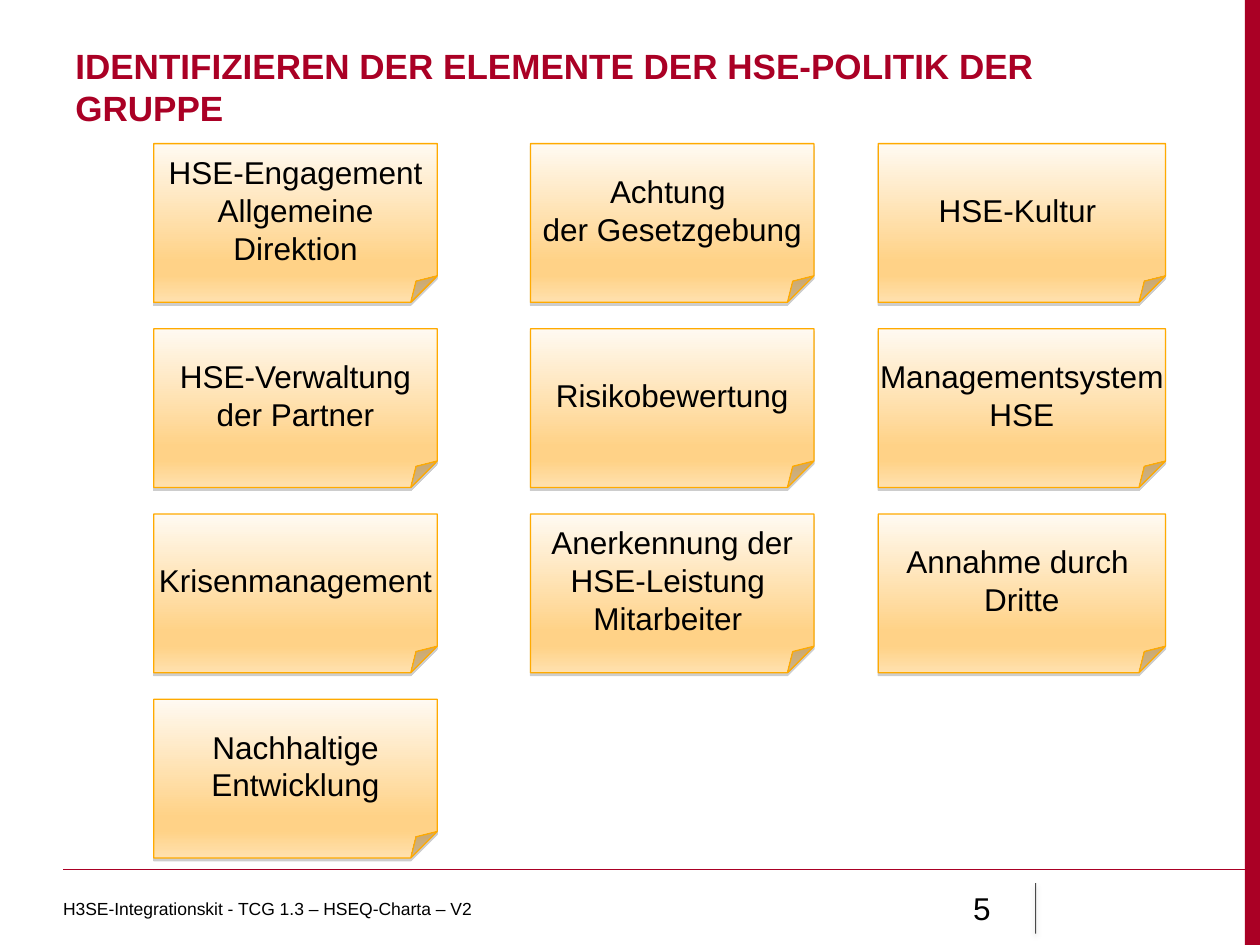
import lxml.etree
import pptx
import pptx.dml.color
import pptx.enum.shapes
import pptx.enum.text
import pptx.oxml
import pptx.oxml.ns
import pptx.util

Inches = pptx.util.Inches
Pt = pptx.util.Pt
qn = pptx.oxml.ns.qn
Align = pptx.enum.text.PP_ALIGN
Anchor = pptx.enum.text.MSO_ANCHOR
Shape = pptx.enum.shapes.MSO_SHAPE

HUES = {
    "red": "AA0025", "black": "000000", "edge": "FFAA00", "shade": "808080",
    "pale": "FFFAF2", "warm": "FFD287", "base": "FFE1AF",
}
STOPS = [(0, "pale"), (74, "warm"), (83, "warm"), (100, "base")]
COLS = [(1.22, 2.25), (4.21, 2.25), (6.97, 2.28)]
TOP, GAP, HIGH = 1.14, 0.21, 1.26
NOTES = [
    ["HSE-Engagement", "Allgemeine Direktion"],
    ["Achtung \nder Gesetzgebung"],
    ["HSE-Kultur "],
    ["HSE-Verwaltung", " der Partner "],
    ["Risikobewertung"],
    ["Managementsystem ", "HSE"],
    ["Krisenmanagement"],
    ["Anerkennung der HSE-Leistung ", "Mitarbeiter "],
    ["Annahme durch \nDritte"],
    ["Nachhaltige Entwicklung"],
]


def color(name):
    """Return the named colour."""
    return pptx.dml.color.RGBColor.from_string(HUES[name])


def tint(node, name, alpha=None):
    """Add a colour element, with alpha in percent, to a node."""
    hue = lxml.etree.SubElement(node, qn("a:srgbClr"), val=HUES[name])
    if alpha is not None:
        lxml.etree.SubElement(hue, qn("a:alpha"), val=str(alpha * 1000))


def shadow(shape, name=None, blur=0):
    """Give a shape a drop shadow, or none without a colour."""
    props = shape._element.spPr
    for old in props.findall(qn("a:effectLst")):
        props.remove(old)
    effects = lxml.etree.SubElement(props, qn("a:effectLst"))
    if name:
        drop = lxml.etree.SubElement(
            effects, qn("a:outerShdw"), blurRad=str(int(Pt(blur))),
            dist=str(int(Pt(1.6))), dir="5400000", rotWithShape="0")
        tint(drop, name, 38)


def write(shape, lines, size, hue="black", align=Align.LEFT,
          anchor=Anchor.MIDDLE, pads=(0.1, 0.05, 0.1, 0.05), bold=False):
    """Fill a shape with paragraphs in one style."""
    frame = shape.text_frame
    frame.word_wrap = True
    frame.vertical_anchor = anchor
    (frame.margin_left, frame.margin_top,
     frame.margin_right, frame.margin_bottom) = map(Inches, pads)
    for i, line in enumerate(lines):
        para = frame.add_paragraph() if i else frame.paragraphs[0]
        para.text = line
        para.alignment = align
        para.font.name = "Arial"
        para.font.size = Pt(size)
        para.font.bold = bold
        para.font.color.rgb = color(hue)


def label(slide, box, lines, size, **style):
    """Add a text box."""
    text = slide.shapes.add_textbox(*map(Inches, box))
    write(text, lines, size, **style)


def rule(slide, start, end, hue, width):
    """Add a straight line."""
    line = slide.shapes.add_connector(
        pptx.enum.shapes.MSO_CONNECTOR.STRAIGHT, *map(Inches, start + end))
    line.line.color.rgb = color(hue)
    line.line.width = Pt(width)
    shadow(line)
    return line


def note(slide, box, lines):
    """Add a sticky note with a folded corner."""
    card = slide.shapes.add_shape(Shape.FOLDED_CORNER, *map(Inches, box))
    card.fill.gradient()
    card.fill.gradient_angle = 270
    stops = card._element.spPr.find(".//" + qn("a:gsLst"))
    for old in list(stops):
        stops.remove(old)
    for pos, name in STOPS:
        stop = lxml.etree.SubElement(stops, qn("a:gs"), pos=str(pos * 1000))
        tint(stop, name)
    card.line.color.rgb = color("edge")
    card.line.width = Pt(0.75)
    shadow(card, "shade")
    write(card, lines, 18, align=Align.CENTER, pads=(0, 0.04, 0, 0.04))


def board(slide, top):
    """Lay the notes out in rows of three."""
    for i, lines in enumerate(NOTES):
        row, col = divmod(i, len(COLS))
        left, wide = COLS[col]
        note(slide, (left, top + row * (HIGH + GAP), wide, HIGH), lines)


def band(slide, left, wide, high):
    """Add the red band on the right edge."""
    bar = slide.shapes.add_shape(
        Shape.RECTANGLE, *map(Inches, (left, 0, wide, high)))
    bar.shadow.inherit = False
    bar.fill.solid()
    bar.fill.fore_color.rgb = color("red")
    bar.line.fill.background()


def footer(slide, left, top):
    """Add the footer rules, text and page number."""
    rule(slide, (left, top), (10, top), "red", 0.75)
    base = top + 0.11
    mark = rule(slide, (left + 7.72, base), (left + 7.72, base + 0.4),
                "black", 0.5)
    hue = mark._element.spPr.find(".//" + qn("a:srgbClr"))
    lxml.etree.SubElement(hue, qn("a:alpha"), val="70000")
    shadow(mark, "black", 3.1)
    label(slide, (left + 6.67, base, 0.79, 0.4), ["5"], 18,
          align=Align.RIGHT)
    label(slide, (left, base, 6.08, 0.4),
          ["H3SE-Integrationskit - TCG 1.3 – HSEQ-Charta – V2"], 10,
          pads=(0, 0.05, 0.1, 0.05))


def main():
    """Build and save the slide."""
    deck = pptx.Presentation()
    deck.slide_width, deck.slide_height = Inches(10), Inches(7.5)
    slide = deck.slides.add_slide(deck.slide_layouts[6])
    band(slide, 9.88, 0.12, 7.5)
    label(slide, (0.5, 0.3, 9.06, 0.69),
          ["IDENTIFIZIEREN DER ELEMENTE DER HSE-POLITIK DER GRUPPE"], 20,
          hue="red", bold=True, anchor=Anchor.TOP,
          pads=(0.1, 0.05, 0.2, 0.05))
    board(slide, TOP)
    footer(slide, 0.5, 6.9)
    deck.save("out.pptx")


if __name__ == "__main__":
    main()
